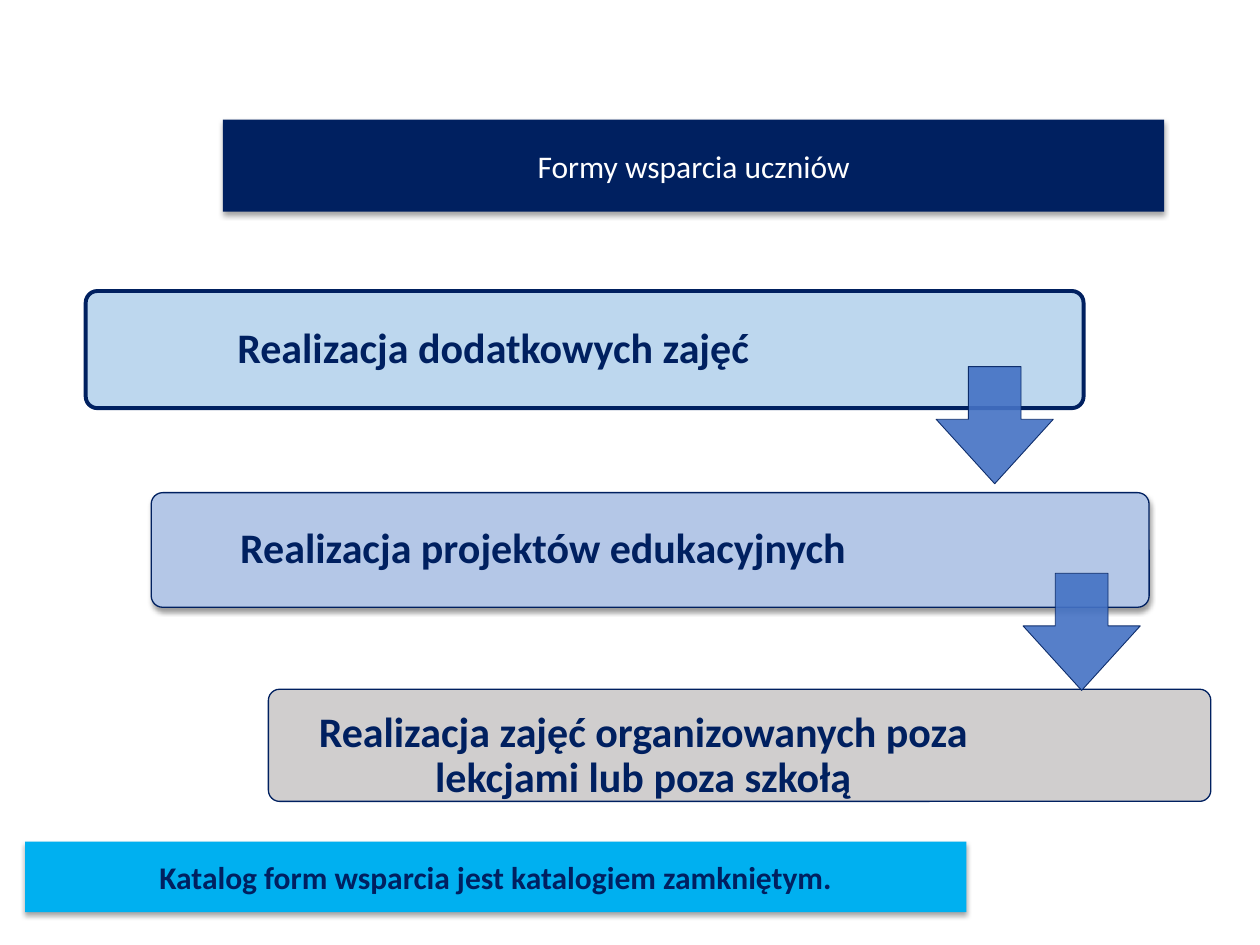
from lxml import etree
from pptx import Presentation
from pptx.dml.color import RGBColor
from pptx.enum import shapes, text
from pptx.oxml.ns import qn
from pptx.util import Inches, Pt

NAVY = RGBColor(0x00, 0x20, 0x60)
WHITE = RGBColor(0xFF, 0xFF, 0xFF)
PALE_BLUE = RGBColor(0xBD, 0xD7, 0xEE)
LAVENDER = RGBColor(0xB4, 0xC7, 0xE7)
GREY = RGBColor(0xD0, 0xCE, 0xCE)
ARROW_BLUE = RGBColor(0x44, 0x72, 0xC4)
CYAN = RGBColor(0x00, 0xB0, 0xF0)
KIND = shapes.MSO_SHAPE


def add_panel(slide, kind, box, fill, line_width=0, adjustments=()):
    """Add a filled preset shape, outlined in navy if a line width is given."""
    panel = slide.shapes.add_shape(kind, *map(Inches, box))
    panel.shadow.inherit = False
    panel.fill.solid()
    panel.fill.fore_color.rgb = fill
    if line_width:
        panel.line.color.rgb = NAVY
        panel.line.width = Pt(line_width)
    else:
        panel.line.fill.background()
    for index, value in enumerate(adjustments):
        panel.adjustments[index] = value
    return panel


def set_alpha(color, percent):
    """Set the opacity of a colour element."""
    etree.SubElement(color, qn("a:alpha")).set("val", str(percent * 1000))


def cast_shadow(panel, distance, opacity):
    """Give a shape a soft black shadow straight below it."""
    effects = panel._element.spPr.find(qn("a:effectLst"))
    shadow = etree.SubElement(effects, qn("a:outerShdw"))
    for key, value in (("blurRad", Pt(3.1)), ("dist", Pt(distance)),
                       ("dir", 90 * 60000), ("rotWithShape", 0)):
        shadow.set(key, str(int(value)))
    color = etree.SubElement(shadow, qn("a:srgbClr"))
    color.set("val", "000000")
    set_alpha(color, opacity)


def write(shape, words, size=18, color=NAVY, bold=True, spacing=1.0, inset=0.05):
    """Write one centred paragraph in a shape."""
    frame = shape.text_frame
    frame.word_wrap = True
    frame.vertical_anchor = text.MSO_ANCHOR.MIDDLE
    frame.margin_left = frame.margin_right = Inches(0.1)
    frame.margin_top = frame.margin_bottom = Inches(inset)
    paragraph = frame.paragraphs[0]
    paragraph.alignment = text.PP_ALIGN.CENTER
    paragraph.line_spacing = spacing
    run = paragraph.add_run()
    run.text = words
    run.font.name = "Calibri"
    run.font.size = Pt(size)
    run.font.bold = bold
    run.font.color.rgb = color


def add_step(slide, words, box, label_box, fill, line_width):
    """Add a rounded step with its label in a separate text box."""
    step = add_panel(slide, KIND.ROUNDED_RECTANGLE, box, fill, line_width, (0.1,))
    label = slide.shapes.add_textbox(*map(Inches, label_box))
    write(label, words, size=24, spacing=0.9, inset=0.1)
    return step


def add_arrow(slide, left, top):
    """Add a slightly transparent arrow that leads to the next step."""
    arrow = add_panel(slide, KIND.DOWN_ARROW, (left, top, 0.93, 0.93),
                      ARROW_BLUE, 0.5, (0.45, 0.55))
    for color in arrow._element.spPr.iter(qn("a:srgbClr")):
        set_alpha(color, 90)


def add_banner(slide, words, box, fill, **style):
    """Add a shadowed rectangle with text."""
    banner = add_panel(slide, KIND.RECTANGLE, box, fill)
    cast_shadow(banner, 1.8, 35)
    write(banner, words, **style)


def main():
    """Build the slide and save it."""
    deck = Presentation()
    deck.slide_width, deck.slide_height = Inches(10), Inches(7.5)
    slide = deck.slides.add_slide(deck.slide_layouts[6])

    add_step(slide, "Realizacja dodatkowych zajęć",
             (0.68, 2.31, 7.92, 0.93), (0.71, 2.34, 6.41, 0.88), PALE_BLUE, 2.25)
    projects = add_step(slide, "Realizacja projektów edukacyjnych",
                        (1.2, 3.91, 7.92, 0.91), (1.19, 3.94, 6.24, 0.85),
                        LAVENDER, 0.75)
    cast_shadow(projects, 1.6, 38)
    add_step(slide, "Realizacja zajęć organizowanych poza lekcjami lub poza szkołą",
             (2.13, 5.47, 7.48, 0.89), (2.16, 5.59, 5.89, 0.83), GREY, 0.75)

    for left, top in ((7.43, 2.91), (8.12, 4.55)):
        add_arrow(slide, left, top)

    add_banner(slide, "Formy wsparcia uczniów", (1.77, 0.95, 7.47, 0.73), NAVY,
               color=WHITE, bold=False)
    add_banner(slide, "Katalog form wsparcia jest katalogiem zamkniętym.",
               (0.2, 6.68, 7.47, 0.56), CYAN)
    deck.save("out.pptx")


if __name__ == "__main__":
    main()
